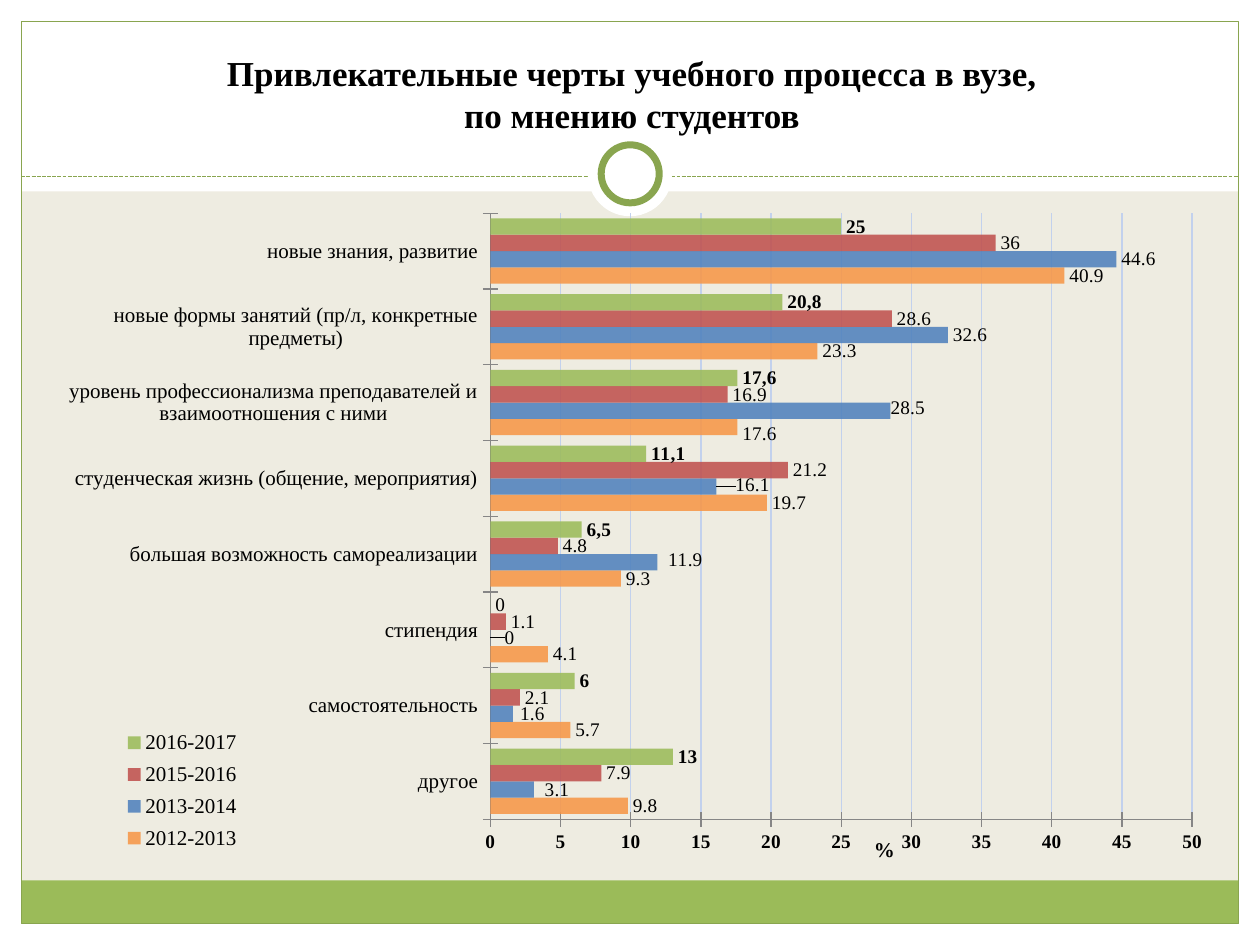
from lxml import etree
from pptx import Presentation
from pptx import util as u
from pptx.chart.data import CategoryChartData
from pptx.dml.color import RGBColor
from pptx.enum import chart as charts, dml, shapes, text
from pptx.oxml import parse_xml
from pptx.oxml.ns import nsdecls, qn

FONT = "Times New Roman"
BEIGE = RGBColor(0xEE, 0xEC, 0xE1)
WHITE = RGBColor(0xFF, 0xFF, 0xFF)
BLACK = RGBColor(0, 0, 0)
GREEN = RGBColor(0x9B, 0xBB, 0x59)
DARK_GREEN = RGBColor(0x89, 0xA5, 0x4F)
ORANGE = RGBColor(0xF7, 0x96, 0x46)
BLUE = RGBColor(0x4F, 0x81, 0xBD)
RED = RGBColor(0xC0, 0x50, 0x4D)
GRID = RGBColor(0xC2, 0xD1, 0xED)
GRAY = RGBColor(0x86, 0x86, 0x86)
WIDTH, HEIGHT, MARGIN = 25.4, 19.05, 0.43

CATEGORIES = [
    "другое", "самостоятельность", "стипендия",
    "большая возможность самореализации",
    "студенческая жизнь (общение, мероприятия)",
    "уровень профессионализма преподавателей и взаимоотношения с ними",
    "новые формы занятий (пр/л, конкретные предметы)",
    "новые знания, развитие",
]
SERIES = [
    ("2012-2013", ORANGE, [9.8, 5.7, 4.1, 9.3, 19.7, 17.6, 23.3, 40.9]),
    ("2013-2014", BLUE, [3.1, 1.6, 0, 11.9, 16.1, 28.5, 32.6, 44.6]),
    ("2015-2016", RED, [7.9, 2.1, 1.1, 4.8, 21.2, 16.9, 28.6, 36]),
    ("2016-2017", GREEN, [13, 6, 0, 6.5, 11.1, 17.6, 20.8, 25]),
]
# Shifts of single labels as fractions of the chart: series -> point -> (x, y)
LABEL_SHIFTS = {
    0: {5: (0, 0.01)},
    1: {0: (0.005, 0), 1: (0.002, 0), 2: (0.008, 0), 3: (0.005, -0.004),
        4: (0.012, -0.002), 5: (-0.004, -0.004)},
}
BOLD_LABELS = {0: "13", 1: "6", 3: "6,5", 4: "11,1", 5: "17,6", 6: "20,8", 7: "25"}


def manual_layout(inner=False, edge=True, **fractions):
    """Return a c:layout element with the given x, y, w, h."""
    rows = '<c:layoutTarget val="inner"/>' if inner else ""
    if edge:
        rows += '<c:xMode val="edge"/><c:yMode val="edge"/>'
    rows += "".join(f'<c:{key} val="{value}"/>' for key, value in fractions.items())
    return parse_xml(f'<c:layout {nsdecls("c")}><c:manualLayout>{rows}'
                     "</c:manualLayout></c:layout>")


def place(parent, layout, after=None):
    """Put the layout in its parent, after the named child or first."""
    for old in parent.findall(qn("c:layout")):
        parent.remove(old)
    previous = parent.find(qn(after)) if after else None
    if previous is None:
        parent.insert(0, layout)
    else:
        previous.addnext(layout)


class SlideBuilder:
    def __init__(self, slide):
        self.slide = slide

    def background(self, color):
        self.slide.background.fill.solid()
        self.slide.background.fill.fore_color.rgb = color

    def shape(self, kind, box, fill=None, line=None, width=0.75):
        shape = self.slide.shapes.add_shape(kind, *map(u.Cm, box))
        shape.shadow.inherit = False
        if fill is None:
            shape.fill.background()
        else:
            shape.fill.solid()
            shape.fill.fore_color.rgb = fill
        if line is None:
            shape.line.fill.background()
        else:
            shape.line.color.rgb = line
            shape.line.width = u.Pt(width)

    def dashed_line(self, ends, color):
        line = self.slide.shapes.add_connector(
            shapes.MSO_CONNECTOR.STRAIGHT, *map(u.Cm, ends))
        line.line.color.rgb = color
        line.line.width = u.Pt(0.75)
        line.line.dash_style = dml.MSO_LINE.SQUARE_DOT
        etree.SubElement(line._element.spPr, qn("a:effectLst"))

    def title(self, box, words):
        frame = self.slide.shapes.add_textbox(*map(u.Cm, box)).text_frame
        frame.word_wrap = True
        frame.vertical_anchor = text.MSO_ANCHOR.BOTTOM
        paragraph = frame.paragraphs[0]
        paragraph.text = words
        paragraph.alignment = text.PP_ALIGN.CENTER
        self.style(paragraph.font, 20, True)

    def style(self, font, size, bold=False):
        font.name, font.size, font.bold = FONT, u.Pt(size), bold
        font.color.rgb = BLACK

    def bar_chart(self, box):
        data = CategoryChartData()
        data.categories = CATEGORIES
        for name, _, values in SERIES:
            data.add_series(name, values)
        chart = self.slide.shapes.add_chart(
            charts.XL_CHART_TYPE.BAR_CLUSTERED, *map(u.Cm, box), data).chart
        self.style(chart.font, 11)
        chart.has_title = False
        plot = chart.plots[0]
        plot.gap_width = 64
        plot.vary_by_categories = False
        place(chart._chartSpace.chart.plotArea,
              manual_layout(inner=True, x=0.383, y=0.026, w=0.599, h=0.886))
        self.axes(chart)
        for index, series in enumerate(plot.series):
            self.series(series, index)

        chart.has_legend = True
        legend = chart.legend
        legend.position = charts.XL_LEGEND_POSITION.RIGHT
        legend.include_in_layout = False
        self.style(legend.font, 12)
        place(legend._element, manual_layout(x=0.05, y=0.77, w=0.14, h=0.2),
              "c:legendPos")

    def axes(self, chart):
        for axis, size, bold in ((chart.category_axis, 12, False),
                                 (chart.value_axis, 11, True)):
            axis.major_tick_mark = charts.XL_TICK_MARK.CROSS
            axis.format.line.color.rgb = GRAY
            self.style(axis.tick_labels.font, size, bold)
        axis = chart.value_axis
        axis.minimum_scale, axis.maximum_scale, axis.major_unit = 0, 50, 5
        axis.tick_labels.number_format = "#,##0"
        axis.tick_labels.number_format_is_linked = False
        axis.major_gridlines.format.line.color.rgb = GRID
        axis.major_gridlines.format.line.width = u.Pt(0.75)
        axis.axis_title.text_frame.text = "%"
        run = axis.axis_title.text_frame.paragraphs[0].runs[0]
        self.style(run.font, 12, True)
        place(axis.axis_title._element, manual_layout(x=0.707, y=0.932), "c:tx")

    def series(self, series, index):
        fill = series.format.fill
        fill.solid()
        fill.fore_color.rgb = SERIES[index][1]
        for color in series._element.iter(qn("a:srgbClr")):
            etree.SubElement(color, qn("a:alpha"), val="87000")
        series.invert_if_negative = False
        labels = series.data_labels
        labels.show_value = True
        labels.position = charts.XL_LABEL_POSITION.OUTSIDE_END
        self.style(labels.font, 11)

        # Labels moved by hand
        for point, (x, y) in LABEL_SHIFTS.get(index, {}).items():
            label = series.points[point].data_label
            self.style(label.font, 11)
            label.position = charts.XL_LABEL_POSITION.OUTSIDE_END
            element = series._element.xpath(f"c:dLbls/c:dLbl[c:idx/@val='{point}']")[0]
            place(element, manual_layout(edge=False, x=x, y=y), "c:idx")

        # Bold labels of the latest year
        if index == len(SERIES) - 1:
            for point, words in BOLD_LABELS.items():
                label = series.points[point].data_label
                label.text_frame.text = words
                label.position = charts.XL_LABEL_POSITION.OUTSIDE_END
                self.style(label.text_frame.paragraphs[0].runs[0].font, 11, True)


def main():
    presentation = Presentation()
    presentation.slide_width, presentation.slide_height = u.Cm(WIDTH), u.Cm(HEIGHT)
    builder = SlideBuilder(presentation.slides.add_slide(presentation.slide_layouts[6]))
    rectangle, oval = shapes.MSO_SHAPE.RECTANGLE, shapes.MSO_SHAPE.OVAL
    right, bottom = WIDTH - MARGIN, HEIGHT - MARGIN

    # Background, white bands and frame
    builder.background(BEIGE)
    for band in ((0, bottom, WIDTH, MARGIN), (0, 0, WIDTH, 3.86),
                 (0, 0, MARGIN, HEIGHT), (right, 0, MARGIN, HEIGHT)):
        builder.shape(rectangle, band, WHITE)
    builder.shape(rectangle, (MARGIN, 17.75, right - MARGIN, 0.87), GREEN)
    builder.shape(rectangle, (MARGIN, MARGIN, right - MARGIN, bottom - MARGIN),
                  line=DARK_GREEN)

    # Divider with ring
    builder.dashed_line((MARGIN, 3.56, right, 3.56), DARK_GREEN)
    builder.shape(oval, (11.85, 2.66, 1.7, 1.7), WHITE)
    builder.shape(oval, (12.12, 2.92, 1.17, 1.17), WHITE, DARK_GREEN, 4)

    # Title and chart
    builder.title((0.89, 0.74, 23.7, 2.11),
                  "Привлекательные черты учебного процесса в вузе,\vпо мнению студентов")
    builder.bar_chart((0.84, 3.94, 23.62, 13.79))
    presentation.save("out.pptx")


if __name__ == "__main__":
    main()
